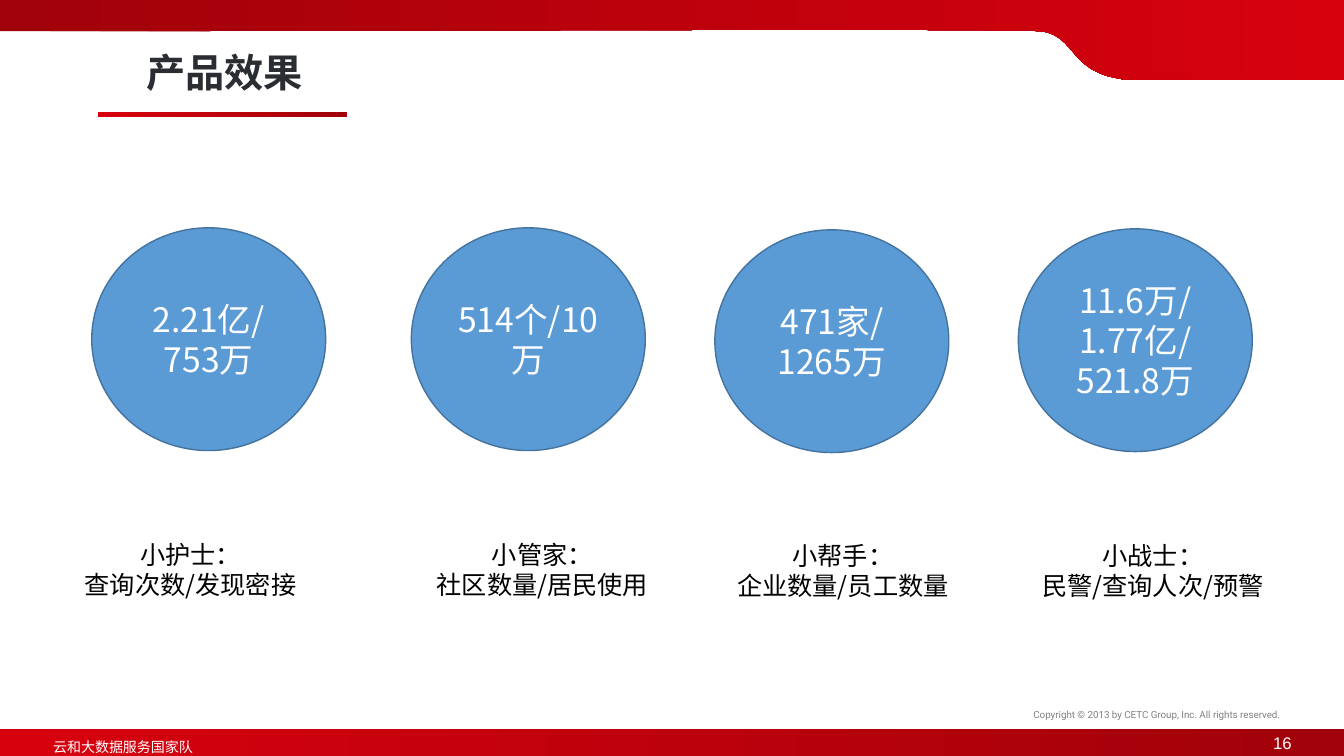
from lxml.etree import SubElement
from pptx import Presentation
from pptx.dml.color import RGBColor
from pptx.enum.shapes import MSO_SHAPE as Shape
from pptx.enum.text import MSO_ANCHOR as Anchor, MSO_AUTO_SIZE as Fit, PP_ALIGN as Align
from pptx.oxml.ns import qn
from pptx.util import Inches, Pt

RED = RGBColor(0xD7, 0x01, 0x0E)
DARK = RGBColor(0xA1, 0x01, 0x0A)
BLUE = RGBColor(0x5B, 0x9B, 0xD5)
EDGE = RGBColor(0x43, 0x73, 0x9E)
INK = RGBColor(0x2A, 0x2E, 0x32)
GREY = RGBColor(0x80, 0x80, 0x80)
BLACK = RGBColor(0, 0, 0)
WHITE = RGBColor(0xFF, 0xFF, 0xFF)
SANS = "Noto Sans CJK SC"


def write(frame, lines, size, color, align=Align.LEFT, face=SANS, bold=False):
    frame.word_wrap = True
    for i, line in enumerate(lines):
        para = frame.add_paragraph() if i else frame.paragraphs[0]
        para.alignment = align
        run = para.add_run()
        run.text = line
        font = run.font
        font.name, font.size, font.bold = face, Pt(size), bold
        font.color.rgb = color
        SubElement(font._element, qn("a:ea")).set("typeface", face)


def shade(shape, first, last):
    """Fill from left to right, with no line and no shadow."""
    shape.shadow.inherit = False
    shape.line.fill.background()
    shape.fill.gradient()
    shape.fill.gradient_angle = 0
    for stop, color, place in zip(shape.fill.gradient_stops, (first, last), (0, 1)):
        stop.color.rgb = color
        stop.position = place


deck = Presentation()
deck.slide_width, deck.slide_height = Inches(13.33), Inches(7.5)
slide = deck.slides.add_slide(deck.slide_layouts[5])
shapes = slide.shapes

# Header band, its curved lower edge drawn through points on two Bezier curves
curves = [
    [(11.1, 0.78), (10.6, 0.7), (10.67, 0.35), (10.32, 0.31)],
    [(10.32, 0.31), (9.97, 0.28), (3.44, 0.31), (0, 0.31)],
]
edge = [(13.33, 0), (13.33, 0.79), (11.16, 0.79), (11.1, 0.78)]
steps = 24
for curve in curves:
    for n in range(1, steps + 1):
        t = n / steps
        parts = ((1 - t) ** 3, 3 * t * (1 - t) ** 2, 3 * t * t * (1 - t), t ** 3)
        edge.append([sum(w * p[axis] for w, p in zip(parts, curve)) for axis in (0, 1)])
path = shapes.build_freeform(0, 0)
path.add_line_segments([(Inches(x), Inches(y)) for x, y in edge], close=True)
shade(path.convert_to_shape(), DARK, RED)

# Footer band and title rule
for x, y, w, h in [(0, 7.23, 13.33, 0.27), (0.97, 1.11, 2.47, 0.05)]:
    bar = shapes.add_shape(Shape.RECTANGLE, Inches(x), Inches(y), Inches(w), Inches(h))
    shade(bar, RED, DARK)

title = shapes.title
title.left, title.top = Inches(1.35), Inches(0.43)
title.width, title.height = Inches(3.09), Inches(0.57)
title.text_frame.auto_size = Fit.NONE
title.text_frame.vertical_anchor = Anchor.TOP
write(title.text_frame, ["产品效果"], 28, INK, bold=True)

# Footer texts
note = shapes.add_textbox(Inches(10.25), Inches(7.03), Inches(3), Inches(0.12)).text_frame
note.margin_left = note.margin_right = note.margin_top = note.margin_bottom = 0
write(note, ["Copyright © 2013 by CETC Group, Inc. All rights reserved."], 7, GREY, face="Roboto")

page = shapes.add_textbox(Inches(9.91), Inches(7.17), Inches(3), Inches(0.4)).text_frame
page.vertical_anchor = Anchor.MIDDLE
write(page, ["16"], 12, WHITE, Align.RIGHT, "Arial")

team = shapes.add_textbox(Inches(0.43), Inches(7.19), Inches(2.13), Inches(0.32)).text_frame
write(team, ["云和大数据服务国家队"], 10, WHITE)
team.paragraphs[0].line_spacing = 1.5

# Circle left and top, figures; label left, top and width, name, measures
items = [
    (0.91, 2.26, "2.21亿/753万", 0.37, 5.3, 3.04, "小护士：", "查询次数/发现密接"),
    (4.08, 2.26, "514个/10万", 3.86, 5.3, 3.04, "小管家：", "社区数量/居民使用"),
    (7.09, 2.28, "471家/1265万", 6.84, 5.31, 3.04, "小帮手：", "企业数量/员工数量"),
    (10.1, 2.27, "11.6万/1.77亿/521.8万", 9.82, 5.31, 3.23, "小战士：", "民警/查询人次/预警"),
]
for x, y, count, left, top, width, name, gauge in items:
    disc = shapes.add_shape(Shape.OVAL, Inches(x), Inches(y), Inches(2.32), Inches(2.21))
    disc.shadow.inherit = False
    disc.fill.solid()
    disc.fill.fore_color.rgb = BLUE
    disc.line.color.rgb = EDGE
    disc.line.width = Pt(1)
    disc.text_frame.vertical_anchor = Anchor.MIDDLE
    write(disc.text_frame, [count], 24, WHITE, Align.CENTER)
    label = shapes.add_textbox(Inches(left), Inches(top), Inches(width), Inches(0.71))
    write(label.text_frame, [name, gauge], 18, BLACK, Align.CENTER)

deck.save("out.pptx")
